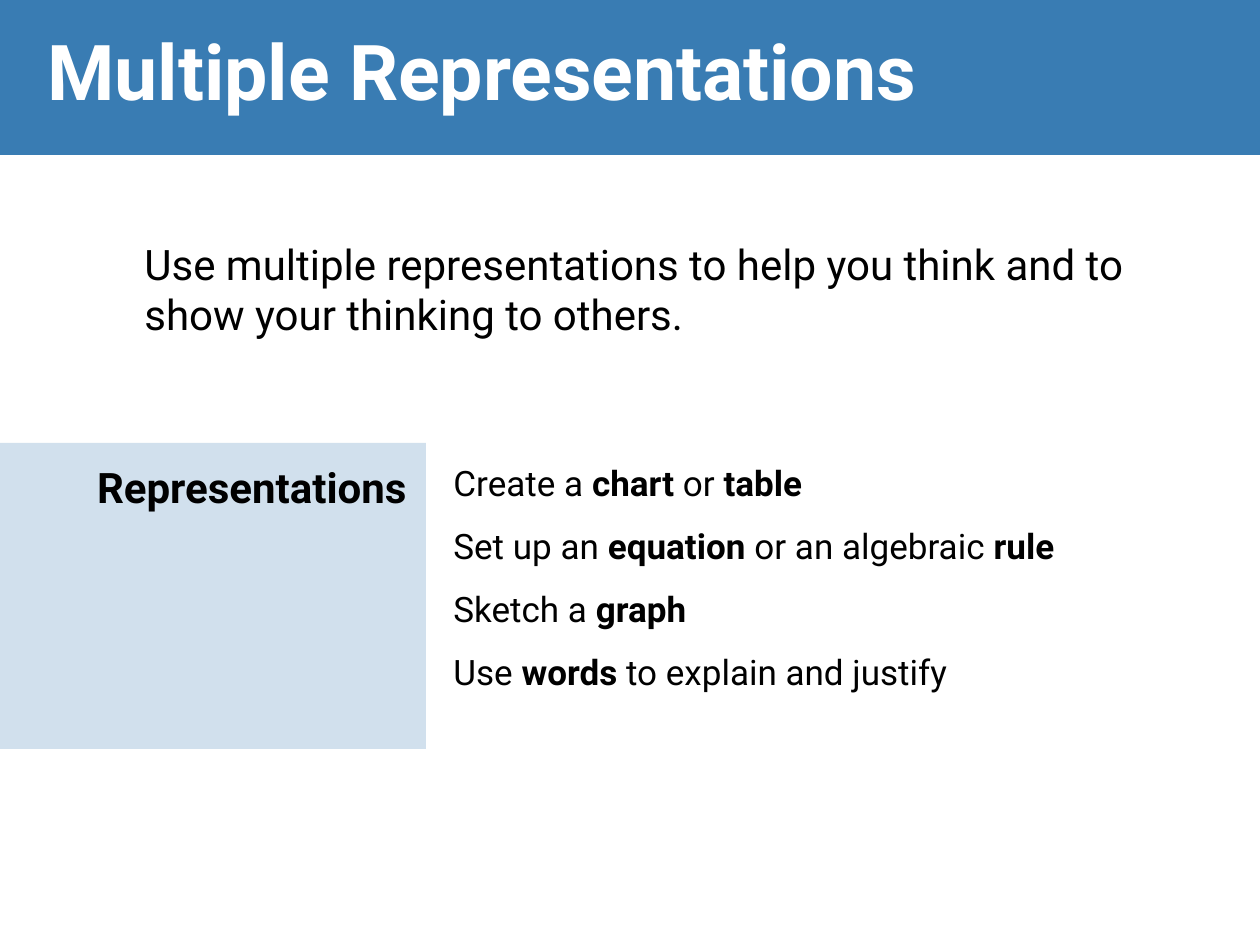
"""Build the Multiple Representations slide."""
import lxml.etree
import pptx
import pptx.dml.color
import pptx.enum.shapes
import pptx.enum.text
import pptx.oxml.ns
import pptx.util

SCALE = 914400 / 126
COLORS = {"blue": "397CB3", "white": "FFFFFF", "black": "000000"}
ALIGN = pptx.enum.text.PP_ALIGN
ANCHOR = pptx.enum.text.MSO_ANCHOR


def emu(*lengths):
    return [round(length * SCALE) for length in lengths]


deck = pptx.Presentation()
deck.slide_width, deck.slide_height = emu(1260, 945)
page = deck.slides.add_slide(deck.slide_layouts[6])

bands = [((0, 0, 1260, 155), 100), ((0, 443, 426, 306), 23)]
for place, opacity in bands:
    band = page.shapes.add_shape(pptx.enum.shapes.MSO_SHAPE.RECTANGLE, *emu(*place))
    band.shadow.inherit = False
    band.line.fill.background()
    band.fill.solid()
    band.fill.fore_color.rgb = pptx.dml.color.RGBColor.from_string(COLORS["blue"])
    if opacity < 100:
        tint = band.fill._xPr.find(".//" + pptx.oxml.ns.qn("a:srgbClr"))
        lxml.etree.SubElement(tint, pptx.oxml.ns.qn("a:alpha"), val=str(opacity * 1000))

# Asterisks switch bold on and off.
texts = [
    ((35, 0, 1134, 139), 44, "white", ANCHOR.MIDDLE, {}, ["*Multiple Representations*"]),
    ((132, 232, 1037, 249), 24, "black", ANCHOR.TOP, {"space_after": pptx.util.Pt(12)},
     ["Use multiple representations to help you think and to show your thinking to others."]),
    ((47, 455, 372, 127), 24, "black", ANCHOR.TOP,
     {"alignment": ALIGN.RIGHT, "space_before": pptx.util.Pt(4.8)}, ["*Representations*"]),
    ((441, 455, 750, 295), 20, "black", ANCHOR.TOP, {"space_after": pptx.util.Pt(12)},
     ["Create a *chart* or *table*",
      "Set up an *equation* or an algebraic *rule*",
      "Sketch a *graph*",
      "Use *words* to explain and justify"]),
]
for place, size, color, anchor, layout, lines in texts:
    frame = page.shapes.add_textbox(*emu(*place)).text_frame
    frame.word_wrap = True
    frame.vertical_anchor = anchor
    for number, line in enumerate(lines):
        para = frame.add_paragraph() if number else frame.paragraphs[0]
        for name, value in layout.items():
            setattr(para, name, value)
        for index, piece in enumerate(line.split("*")):
            if piece:
                span = para.add_run()
                span.text = piece
                looks = {"name": "Roboto", "size": pptx.util.Pt(size), "bold": index % 2 == 1}
                for name, value in looks.items():
                    setattr(span.font, name, value)
                span.font.color.rgb = pptx.dml.color.RGBColor.from_string(COLORS[color])

deck.save("out.pptx")
